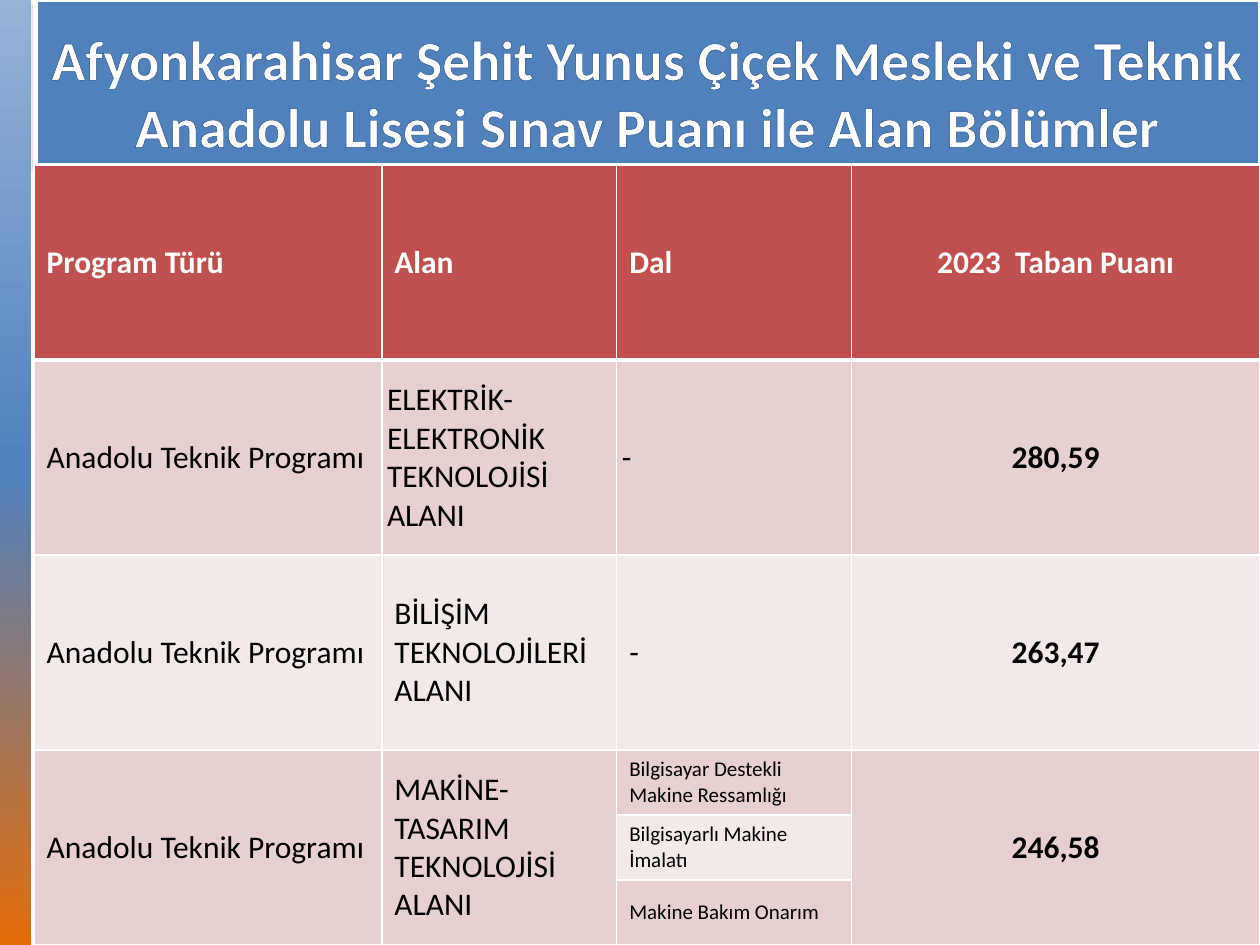
import pptx
import pptx.util
import pptx.dml.color
import pptx.enum.shapes
import pptx.enum.text
import pptx.oxml
import pptx.oxml.ns

Pt = pptx.util.Pt
RECT = pptx.enum.shapes.MSO_SHAPE.RECTANGLE
ALIGN = pptx.enum.text.PP_ALIGN
ANCHOR = pptx.enum.text.MSO_ANCHOR
NS = pptx.oxml.ns.nsdecls("a")
WHITE, BLACK, BLUE, RED = "FFFFFF", "000000", "4F81BD", "C0504D"
BANDS = ["E8D0D0", "F4E9E9"]


def rgb(code):
    return pptx.dml.color.RGBColor.from_string(code)


def add_run(p, text, size, color, bold):
    r = p.add_run()
    r.text = text
    r.font.name = "Calibri"
    r.font.size = Pt(size)
    r.font.bold = bold
    r.font.color.rgb = rgb(color)
    return r


prs = pptx.Presentation()
prs.slide_width, prs.slide_height = Pt(720), Pt(540)
s = prs.slides.add_slide(prs.slide_layouts[6])

# Side strip with a three-colour gradient
strip = s.shapes.add_shape(RECT, Pt(0), Pt(0), Pt(18), Pt(540))
strip.shadow.inherit = False
strip.line.fill.background()
strip.fill.gradient()
strip.fill.gradient_angle = 270
stops = strip._element.spPr.find(".//" + pptx.oxml.ns.qn("a:gsLst"))
for stop in list(stops):
    stops.remove(stop)
for pos, color in [(0, "95B3D7"), (50, BLUE), (100, "E46C0A")]:
    stops.append(pptx.oxml.parse_xml(
        f'<a:gs {NS} pos="{pos * 1000}"><a:srgbClr val="{color}"/></a:gs>'))

# Title bar
title = s.shapes.add_shape(RECT, Pt(20.4), Pt(0), Pt(699.6), Pt(94.3))
title.fill.solid()
title.fill.fore_color.rgb = rgb(BLUE)
title.line.color.rgb = rgb(WHITE)
title.line.width = Pt(2.5)
title._element.spPr.append(pptx.oxml.parse_xml(
    f'<a:effectLst {NS}><a:outerShdw blurRad="{Pt(3.1)}" dist="{Pt(1.6)}" dir="5400000" '
    'rotWithShape="0"><a:srgbClr val="000000"><a:alpha val="38000"/></a:srgbClr>'
    '</a:outerShdw></a:effectLst>'))
tf = title.text_frame
tf.word_wrap = True
tf.vertical_anchor = ANCHOR.BOTTOM
p = tf.paragraphs[0]
p.alignment = ALIGN.CENTER
r = add_run(p, "Afyonkarahisar Şehit Yunus Çiçek Mesleki ve Teknik "
               "Anadolu Lisesi Sınav Puanı ile Alan Bölümler", 32, WHITE, True)
r.font._element.insert(0, pptx.oxml.parse_xml(
    f'<a:ln {NS} w="{Pt(1)}"><a:solidFill><a:srgbClr val="1F497D"/></a:solidFill></a:ln>'))

# Score table
program = "Anadolu Teknik Programı"
rows = [
    ["Program Türü", "Alan", "Dal", "2023  Taban Puanı"],
    [program, "ELEKTRİK- ELEKTRONİK TEKNOLOJİSİ ALANI", "-", "280,59"],
    [program, "BİLİŞİM TEKNOLOJİLERİ ALANI", "-", "263,47"],
    [program, "MAKİNE-TASARIM TEKNOLOJİSİ ALANI", "Bilgisayar Destekli Makine Ressamlığı", "246,58"],
    [None, None, "Bilgisayarlı Makine İmalatı", None],
    [None, None, "Makine Bakım Onarım", None],
]
widths = [198.7, 134.2, 134.2, 233.4]
heights = [111.45] * 3 + [37.15] * 3
narrow_cells = {(1, 1), (1, 2), (3, 3)}

table = s.shapes.add_table(len(rows), len(widths), Pt(19.5), Pt(94.3),
                           Pt(sum(widths)), Pt(sum(heights))).table
for col, width in zip(table.columns, widths):
    col.width = Pt(width)
for row, height in zip(table.rows, heights):
    row.height = Pt(height)
for j in (0, 1, 3):
    table.cell(3, j).merge(table.cell(5, j))

for i, texts in enumerate(rows):
    for j, text in enumerate(texts):
        cell = table.cell(i, j)
        header, score = i == 0, j == 3
        cell.vertical_anchor = ANCHOR.MIDDLE
        cell.fill.solid()
        band = 0 if text is None else (i - 1) % 2
        cell.fill.fore_color.rgb = rgb(RED if header else BANDS[band])
        if (i, j) in narrow_cells:
            cell.margin_left = cell.margin_right = Pt(3)
        tcPr = cell._tc.get_or_add_tcPr()
        for k, side in enumerate("LRTB"):
            thick = (i, side) in [(0, "B"), (1, "T")]
            tcPr.insert(k, pptx.oxml.parse_xml(
                f'<a:ln{side} {NS} w="{Pt(3 if thick else 1)}"><a:solidFill>'
                f'<a:srgbClr val="{WHITE}"/></a:solidFill></a:ln{side}>'))
        if text is None:
            continue
        p = cell.text_frame.paragraphs[0]
        p.alignment = ALIGN.CENTER if score else ALIGN.LEFT
        size = 12 if i >= 3 and j == 2 else 18
        add_run(p, text, size, WHITE if header else BLACK, header or score)

prs.save("out.pptx")
